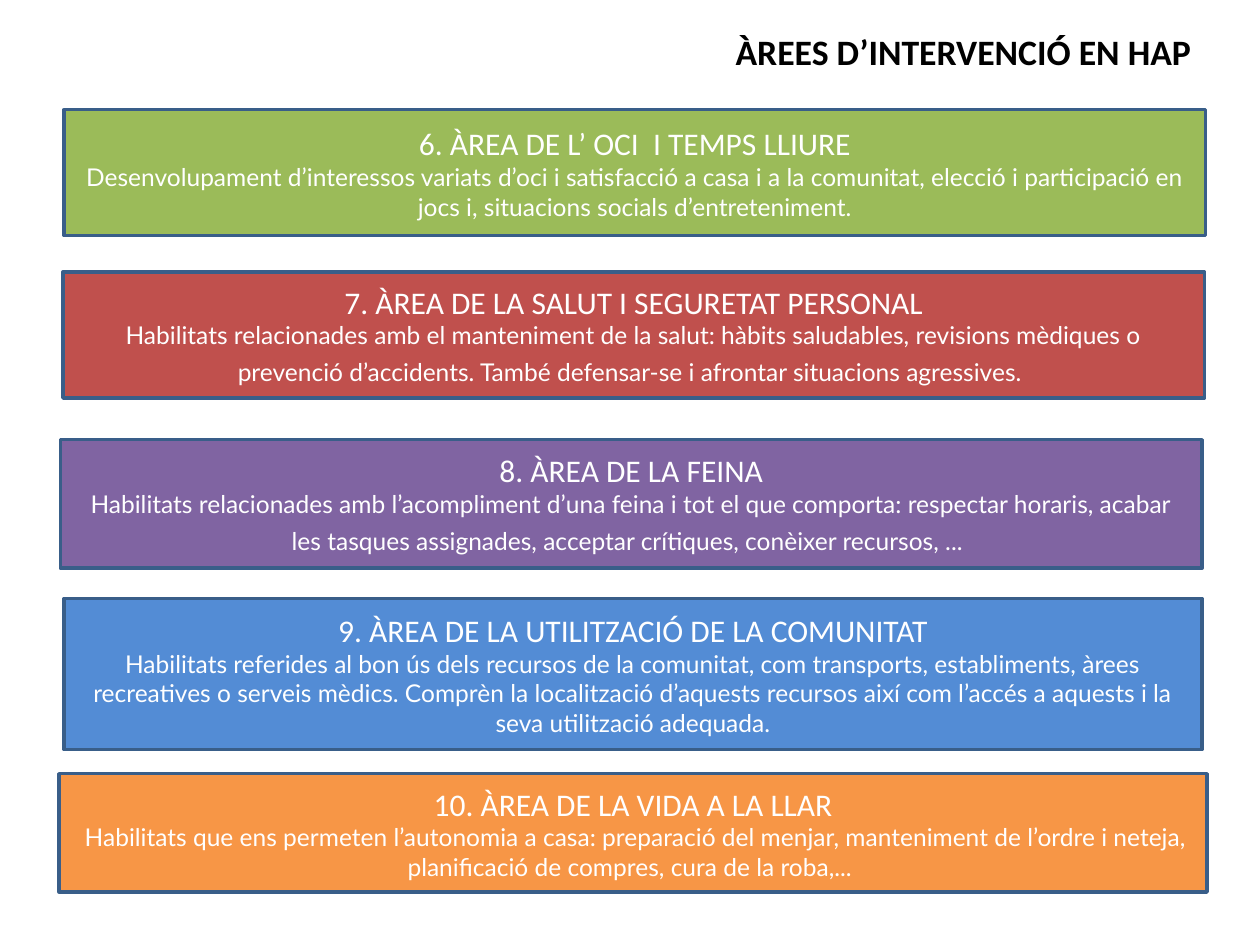
from pptx import Presentation
from pptx.dml.color import RGBColor
from pptx.enum.shapes import MSO_SHAPE
from pptx.enum.text import MSO_ANCHOR, PP_ALIGN
from pptx.util import Inches, Pt

RECT = MSO_SHAPE.RECTANGLE
MIDDLE = MSO_ANCHOR.MIDDLE
LEFT, CENTER = PP_ALIGN.LEFT, PP_ALIGN.CENTER

WIDE, HIGH = Inches(10), Inches(7.5)
HEAD, BODY = "Calibri", "Lato"
COLORS = {
    "black": "000000", "white": "FFFFFF", "edge": "395E89",
    "green": "9BBB59", "red": "C0504D", "purple": "8064A2",
    "blue": "538CD5", "orange": "F79646",
}
GAP = (" ", 18, HEAD)  # tall space that opens up the last line

# Fill, box (percent of slide: left, top, width, height), heading, body runs
AREAS = [
    ("green", (5.1, 11.6, 90.6, 13.33), "6. ÀREA DE L’ OCI  I TEMPS LLIURE",
     [("Desenvolupament d’interessos variats d’oci i satisfacció a casa i a la "
       "comunitat, elecció i participació en jocs i, situacions socials "
       "d’entreteniment.", 14, BODY)]),
    ("red", (5, 28.8, 90.6, 13.33), "7. ÀREA DE LA SALUT I SEGURETAT PERSONAL",
     [("Habilitats relacionades amb el manteniment de la salut: hàbits "
       "saludables, revisions mèdiques o prevenció d’accidents. També "
       "defensar-se i afrontar situacions agressives.", 14, BODY), GAP]),
    ("purple", (4.8, 46.53, 90.6, 13.6), "8. ÀREA DE LA FEINA",
     [("Habilitats relacionades amb l’acompliment d’una feina i tot el que "
       "comporta: respectar horaris, acabar les tasques assignades, acceptar "
       "crítiques, conèixer recursos, ...", 14, BODY), GAP]),
    ("blue", (5.1, 63.33, 90.3, 16), "9. ÀREA DE LA UTILITZACIÓ DE LA COMUNITAT",
     [("Habilitats referides al bon ús dels recursos de la comunitat, com "
       "transports, establiments, àrees recreatives o serveis mèdics. Comprèn "
       "la localització d’aquests recursos així com l’accés a aquests i la "
       "seva utilització adequada.", 14, BODY)]),
    ("orange", (4.7, 81.87, 91.1, 12.53), "10. ÀREA DE LA VIDA A LA LLAR",
     [(" ", 14, HEAD),
      ("Habilitats que ens permeten l’autonomia a casa: preparació del menjar, "
       "manteniment de l’ordre i neteja, planificació de compres, cura de la "
       "roba,... ", 14, BODY)]),
]


def paint(name):
    return RGBColor.from_string(COLORS[name])


def place(box):
    """Turn percentages of the slide into lengths."""
    return [int(part * side / 100)
            for part, side in zip(box, (WIDE, HIGH, WIDE, HIGH))]


def write(para, runs, color, align, bold=False):
    para.alignment = align
    for text, size, face in runs:
        run = para.add_run()
        run.text = text
        font = run.font
        font.size, font.name, font.bold = Pt(size), face, bold
        font.color.rgb = paint(color)


def add_title(slide, text, box):
    frame = slide.shapes.add_textbox(*place(box)).text_frame
    frame.word_wrap = False
    frame.vertical_anchor = MIDDLE
    write(frame.paragraphs[0], [(text, 20.4, HEAD)], "black", LEFT, True)


def add_area(slide, fill, box, head, body):
    panel = slide.shapes.add_shape(RECT, *place(box))
    panel.shadow.inherit = False
    panel.fill.solid()
    panel.fill.fore_color.rgb = paint(fill)
    panel.line.color.rgb = paint("edge")
    panel.line.width = Pt(2)
    frame = panel.text_frame
    frame.word_wrap = True
    frame.vertical_anchor = MIDDLE
    write(frame.paragraphs[0], [(head, 18, HEAD)], "white", CENTER)
    write(frame.add_paragraph(), body, "white", CENTER)


def main():
    deck = Presentation()
    deck.slide_width, deck.slide_height = WIDE, HIGH
    slide = deck.slides.add_slide(deck.slide_layouts[6])
    # Title at the top right
    add_title(slide, "ÀREES D’INTERVENCIÓ EN HAP", (57.4, 3.6, 38.3, 3.6))
    # One coloured panel per area
    for area in AREAS:
        add_area(slide, *area)
    deck.save("out.pptx")


if __name__ == "__main__":
    main()
